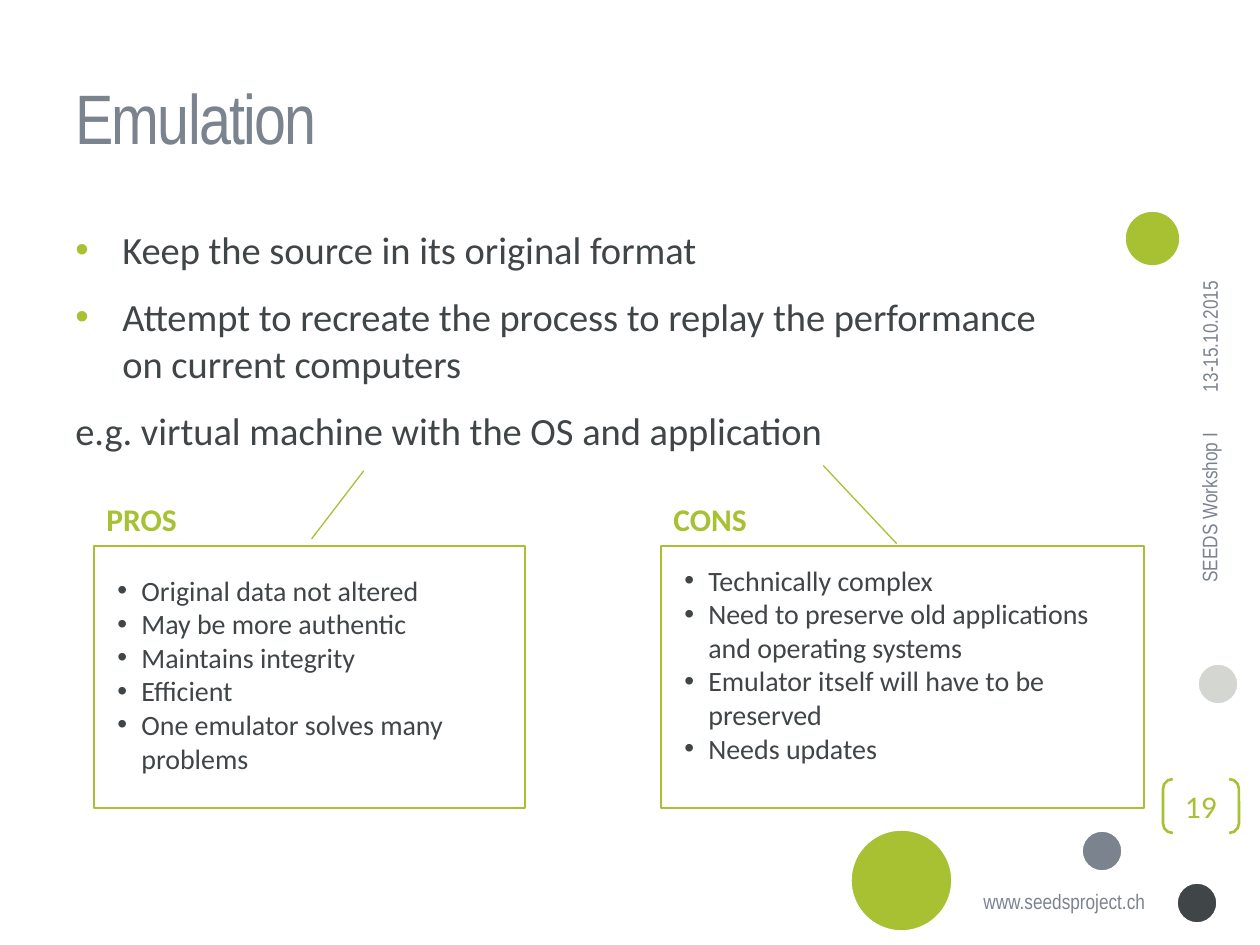
from lxml import etree
from pptx import Presentation
from pptx.dml.color import RGBColor
from pptx.enum.shapes import MSO_SHAPE
from pptx.enum.text import MSO_ANCHOR, MSO_AUTO_SIZE, PP_ALIGN
from pptx.oxml.ns import qn
from pptx.util import Inches, Pt

OVAL, CALLOUT, BRACKETS = MSO_SHAPE.OVAL, MSO_SHAPE.LINE_CALLOUT_1, MSO_SHAPE.DOUBLE_BRACKET
TOP, MIDDLE = MSO_ANCHOR.TOP, MSO_ANCHOR.MIDDLE
GROW, FIXED = MSO_AUTO_SIZE.SHAPE_TO_FIT_TEXT, MSO_AUTO_SIZE.NONE
LEFT, CENTER, RIGHT = PP_ALIGN.LEFT, PP_ALIGN.CENTER, PP_ALIGN.RIGHT

GREEN = RGBColor(0xA7, 0xC1, 0x33)
DARK = RGBColor(0x40, 0x45, 0x48)
SLATE = RGBColor(0x7B, 0x83, 0x8F)
PALE = RGBColor(0xD4, 0xD6, 0xD2)
WHITE = RGBColor(0xFF, 0xFF, 0xFF)
NARROW, BODY = "Arial Narrow", "Calibri"
PX = Inches(1) / 126

CIRCLES = [
    (850, 829, 103, GREEN),
    (1124, 210, 57, GREEN),
    (1176, 882, 42, DARK),
    (1197, 663, 42, PALE),
    (1081, 830, 42, SLATE),
]
TITLE = "Emulation"
POINTS = [
    "Keep the source in its original format",
    "Attempt to recreate the process to replay the performance on current computers",
]
EXAMPLE = "e.g. virtual machine with the OS and application"
CALLOUT_TOP, CALLOUT_HEIGHT, LABEL_TOP = 546, 262, 494
CALLOUTS = [
    {
        "label": "PROS", "left": 94, "width": 431, "label_width": 97,
        "pointer": (-0.027, 0.505, -0.287, 0.626),
        "list_box": (105, 567, 410, 251),
        "items": [
            "Original data not altered",
            "May be more authentic",
            "Maintains integrity",
            "Efficient",
            "One emulator solves many problems",
        ],
    },
    {
        "label": "CONS", "left": 661, "width": 483, "label_width": 100,
        "pointer": (-0.009, 0.488, -0.307, 0.336),
        "list_box": (672, 557, 451, 318),
        "items": [
            "Technically complex",
            "Need to preserve old applications and operating systems",
            "Emulator itself will have to be preserved",
            "Needs updates",
        ],
    },
]
SIDE_TEXTS = [
    ("SEEDS Workshop I", (1099, 508, 220, 45), RIGHT),
    ("13-15.10.2015", (1128, 302, 163, 42), LEFT),
]


def emu(*lengths):
    return [round(length * PX) for length in lengths]


def add_bullet(para, indent, color):
    props = para._p.get_or_add_pPr()
    margin = round(indent * PX)
    props.set("marL", str(margin))
    props.set("indent", str(-margin))
    bullet_color = etree.SubElement(props, qn("a:buClr"))
    etree.SubElement(bullet_color, qn("a:srgbClr"), val=str(color))
    etree.SubElement(props, qn("a:buFont"), typeface="Arial")
    etree.SubElement(props, qn("a:buChar"), char="•")


def write(box, lines, size, color, font=BODY, bold=False, align=LEFT, anchor=TOP,
          wrap=True, fit=FIXED, gap=0, indent=0, bullets=0, bullet_color=DARK, tracking=0):
    frame = box.text_frame
    frame.word_wrap, frame.auto_size, frame.vertical_anchor = wrap, fit, anchor
    for index, line in enumerate(lines):
        para = frame.add_paragraph() if index else frame.paragraphs[0]
        para.alignment = align
        if index and gap:
            para.space_before = Pt(gap)
        if index < bullets:
            add_bullet(para, indent, bullet_color)
        span = para.add_run()
        span.text = line
        span.font.name, span.font.size, span.font.bold = font, Pt(size), bold
        span.font.color.rgb = color
        if tracking:
            span._r.get_or_add_rPr().set("spc", str(tracking * 100))


def add_box(page, place, lines, size, color, rotation=0, **style):
    box = page.shapes.add_textbox(*emu(*place))
    box.rotation = rotation
    write(box, lines, size, color, **style)


def add_outline(page, kind, place, fill, line, weight):
    shape = page.shapes.add_shape(kind, *emu(*place))
    shape.shadow.inherit = False
    if fill is None:
        shape.fill.background()
    else:
        shape.fill.solid()
        shape.fill.fore_color.rgb = fill
    shape.line.color.rgb = line
    shape.line.width = Pt(weight)
    return shape


def main():
    deck = Presentation()
    deck.slide_width, deck.slide_height = emu(1260, 945)
    page = deck.slides.add_slide(deck.slide_layouts[6])

    for left, top, size, color in CIRCLES:
        add_outline(page, OVAL, (left, top, size, size), color, WHITE, 2)
    add_box(page, (971, 882, 194, 38), ["www.seedsproject.ch"], 12, SLATE,
            font=NARROW, wrap=False, fit=GROW)

    badge = add_outline(page, BRACKETS, (1163, 779, 76, 54), None, GREEN, 1.5)
    badge.adjustments[0] = 0.18
    frame = badge.text_frame
    frame.margin_left = frame.margin_right = frame.margin_top = frame.margin_bottom = 0
    write(badge, ["19"], 18, GREEN, align=CENTER, anchor=MIDDLE)

    for text, place, align in SIDE_TEXTS:
        add_box(page, place, [text], 12, SLATE, rotation=270,
                font=NARROW, align=align, anchor=MIDDLE)

    add_box(page, (63, 38, 1008, 158), [TITLE], 40, SLATE,
            font=NARROW, anchor=MIDDLE, tracking=-1)
    add_box(page, (63, 220, 1008, 662), POINTS + [EXAMPLE], 22, DARK, gap=12,
            indent=47, bullets=len(POINTS), bullet_color=GREEN)

    for side in CALLOUTS:
        place = (side["left"], CALLOUT_TOP, side["width"], CALLOUT_HEIGHT)
        callout = add_outline(page, CALLOUT, place, WHITE, GREEN, 0.75)
        for index, value in enumerate(side["pointer"]):
            callout.adjustments[index] = value
        add_box(page, side["list_box"], side["items"], 16, DARK, fit=GROW,
                indent=24, bullets=len(side["items"]))
        add_box(page, (side["left"], LABEL_TOP, side["label_width"], 50), [side["label"]],
                18, GREEN, bold=True, wrap=False, fit=GROW)

    deck.save("out.pptx")


if __name__ == "__main__":
    main()
